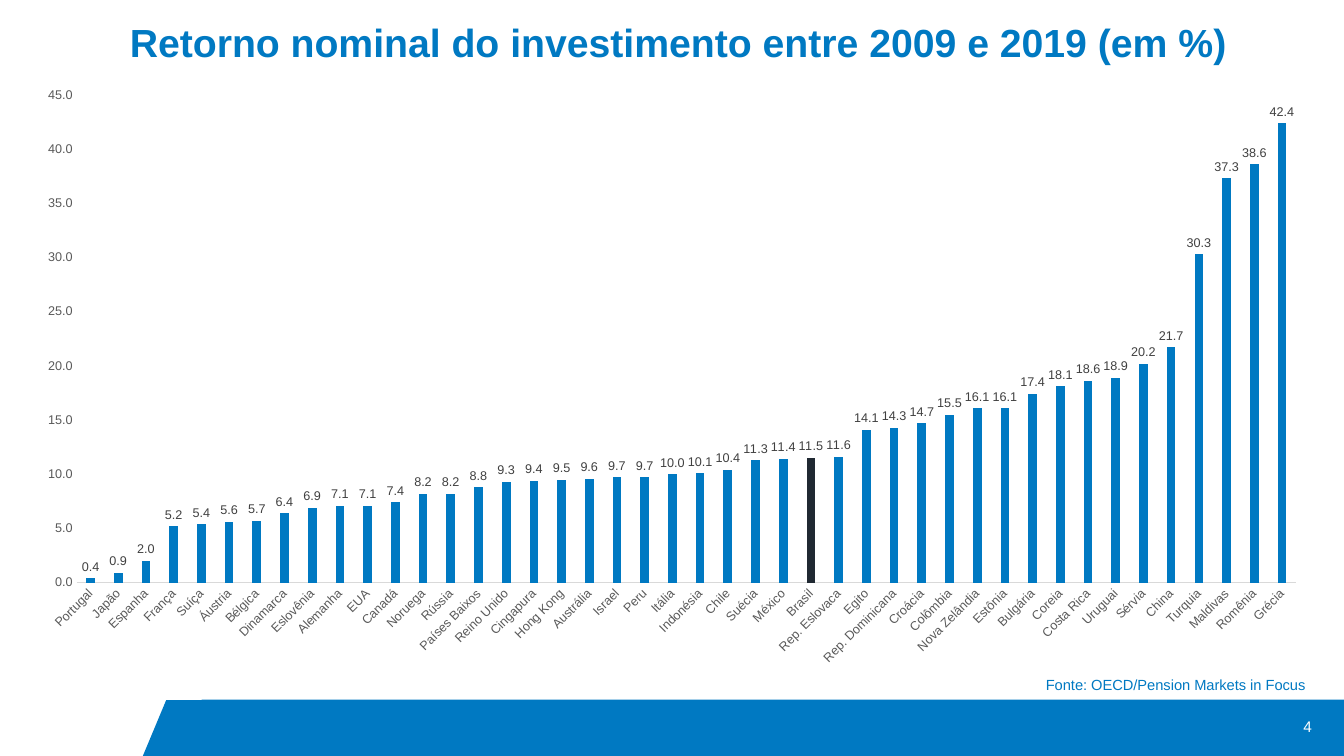
from lxml import etree
from pptx import Presentation
from pptx.chart.data import CategoryChartData
from pptx.dml.color import RGBColor
from pptx.enum.chart import XL_CHART_TYPE, XL_LABEL_POSITION, XL_TICK_MARK
from pptx.enum.shapes import MSO_SHAPE
from pptx.enum.text import MSO_ANCHOR, PP_ALIGN
from pptx.util import Inches, Pt

BLUE = RGBColor(0x00, 0x79, 0xC2)
DARK = RGBColor(0x20, 0x29, 0x32)
WHITE = RGBColor(0xFF, 0xFF, 0xFF)
BLACK = RGBColor(0x00, 0x00, 0x00)
AXIS_TEXT = RGBColor(0x59, 0x59, 0x59)
LABEL_TEXT = RGBColor(0x40, 0x40, 0x40)
AXIS_LINE = RGBColor(0xD9, 0xD9, 0xD9)
NUMBER_FORMAT = "#,##0.0"
HIGHLIGHT = "Brasil"

RETURNS = {
    "Portugal": 0.4, "Japão": 0.9, "Espanha": 2, "França": 5.2, "Suíça": 5.4,
    "Áustria": 5.6, "Bélgica": 5.7, "Dinamarca": 6.4, "Eslovênia": 6.9,
    "Alemanha": 7.1, "EUA": 7.1, "Canadá": 7.4, "Noruega": 8.2, "Rússia": 8.2,
    "Países Baixos": 8.8, "Reino Unido": 9.3, "Cingapura": 9.4,
    "Hong Kong": 9.5, "Austrália": 9.6, "Israel": 9.7, "Peru": 9.7,
    "Itália": 10, "Indonésia": 10.1, "Chile": 10.4, "Suécia": 11.3,
    "México": 11.4, "Brasil": 11.5, "Rep. Eslovaca": 11.6, "Egito": 14.1,
    "Rep. Dominicana": 14.3, "Croácia": 14.7, "Colômbia": 15.5,
    "Nova Zelândia": 16.1, "Estônia": 16.1, "Bulgária": 17.4, "Coreia": 18.1,
    "Costa Rica": 18.6, "Uruguai": 18.9, "Sérvia": 20.2, "China": 21.7,
    "Turquia": 30.3, "Maldivas": 37.3, "Romênia": 38.6, "Grécia": 42.4,
}


def set_font(font, size, color, bold=False):
    font.name = "Arial"
    font.size = Pt(size)
    font.color.rgb = color
    font.bold = bold


def write(sp, text, size, color, bold=False, align=PP_ALIGN.RIGHT,
          anchor=MSO_ANCHOR.TOP, spacing=None):
    tf = sp.text_frame
    tf.word_wrap = True
    tf.vertical_anchor = anchor
    p = tf.paragraphs[0]
    p.alignment = align
    p.line_spacing = spacing
    r = p.add_run()
    r.text = text
    set_font(r.font, size, color, bold)


prs = Presentation()
prs.slide_width, prs.slide_height = Inches(13.33), Inches(7.5)
slide = prs.slides.add_slide(prs.slide_layouts[5])
shapes = slide.shapes

# Footer band with a slanted left end
band = shapes.add_shape(MSO_SHAPE.RECTANGLE, Inches(2), Inches(6.94),
                        Inches(11.33), Inches(0.56))
slant = shapes.add_shape(MSO_SHAPE.FLOWCHART_MANUAL_INPUT, Inches(1.72),
                         Inches(6.64), Inches(0.56), Inches(1.17))
slant.rotation = 90
slant._element.spPr.xfrm.set("flipV", "1")
for sp in (band, slant):
    sp.shadow.inherit = False
    sp.fill.solid()
    sp.fill.fore_color.rgb = BLUE
    sp.line.fill.background()

title = shapes.title
title.left, title.top = Inches(0.34), Inches(0.18)
title.width, title.height = Inches(12.77), Inches(0.99)
write(title, "Retorno nominal do investimento entre 2009 e 2019 (em %)", 28,
      BLUE, bold=True, align=PP_ALIGN.CENTER, spacing=0.9)

number = shapes.add_textbox(Inches(11.67), Inches(7.03), Inches(1.44), Inches(0.36))
write(number, "4", 11, WHITE, anchor=MSO_ANCHOR.MIDDLE)

# Column chart
data = CategoryChartData(number_format=NUMBER_FORMAT)
data.categories = list(RETURNS)
data.add_series("Series 1", list(RETURNS.values()))
chart = shapes.add_chart(XL_CHART_TYPE.COLUMN_CLUSTERED, Inches(0.22), Inches(0.75),
                         Inches(12.89), Inches(5.97), data).chart
chart.has_legend = False
chart.has_title = False
set_font(chart.font, 10, BLACK)

for axis in (chart.category_axis, chart.value_axis):
    axis.major_tick_mark = axis.minor_tick_mark = XL_TICK_MARK.NONE
    axis.has_major_gridlines = False
    set_font(axis.tick_labels.font, 9, AXIS_TEXT)
line = chart.category_axis.format.line
line.color.rgb = AXIS_LINE
line.width = Pt(0.75)
body = chart.category_axis.tick_labels.font._element.getparent().getparent().getparent()
body.find("{*}bodyPr").set("rot", "-2700000")

values = chart.value_axis
values.format.line.fill.background()
values.minimum_scale, values.maximum_scale, values.major_unit = 0, 45, 5
values.tick_labels.number_format = NUMBER_FORMAT
values.tick_labels.number_format_is_linked = False

plot = chart.plots[0]
plot.gap_width, plot.overlap = 219, -27
plot.vary_by_categories = False
series = plot.series[0]
series.invert_if_negative = False
highlight = series.points[list(RETURNS).index(HIGHLIGHT)]
for bar, color in ((series, BLUE), (highlight, DARK)):
    bar.format.fill.solid()
    bar.format.fill.fore_color.rgb = color

labels = series.data_labels
labels.show_value = True
labels.position = XL_LABEL_POSITION.OUTSIDE_END
labels.number_format = NUMBER_FORMAT
labels.number_format_is_linked = False
set_font(labels.font, 9, LABEL_TEXT)

source = shapes.add_textbox(Inches(0.28), Inches(6.68), Inches(12.77), Inches(0.36))
write(source, "Fonte: OECD/Pension Markets in Focus", 10.5, BLUE, spacing=0.9)

prs.save("out.pptx")
